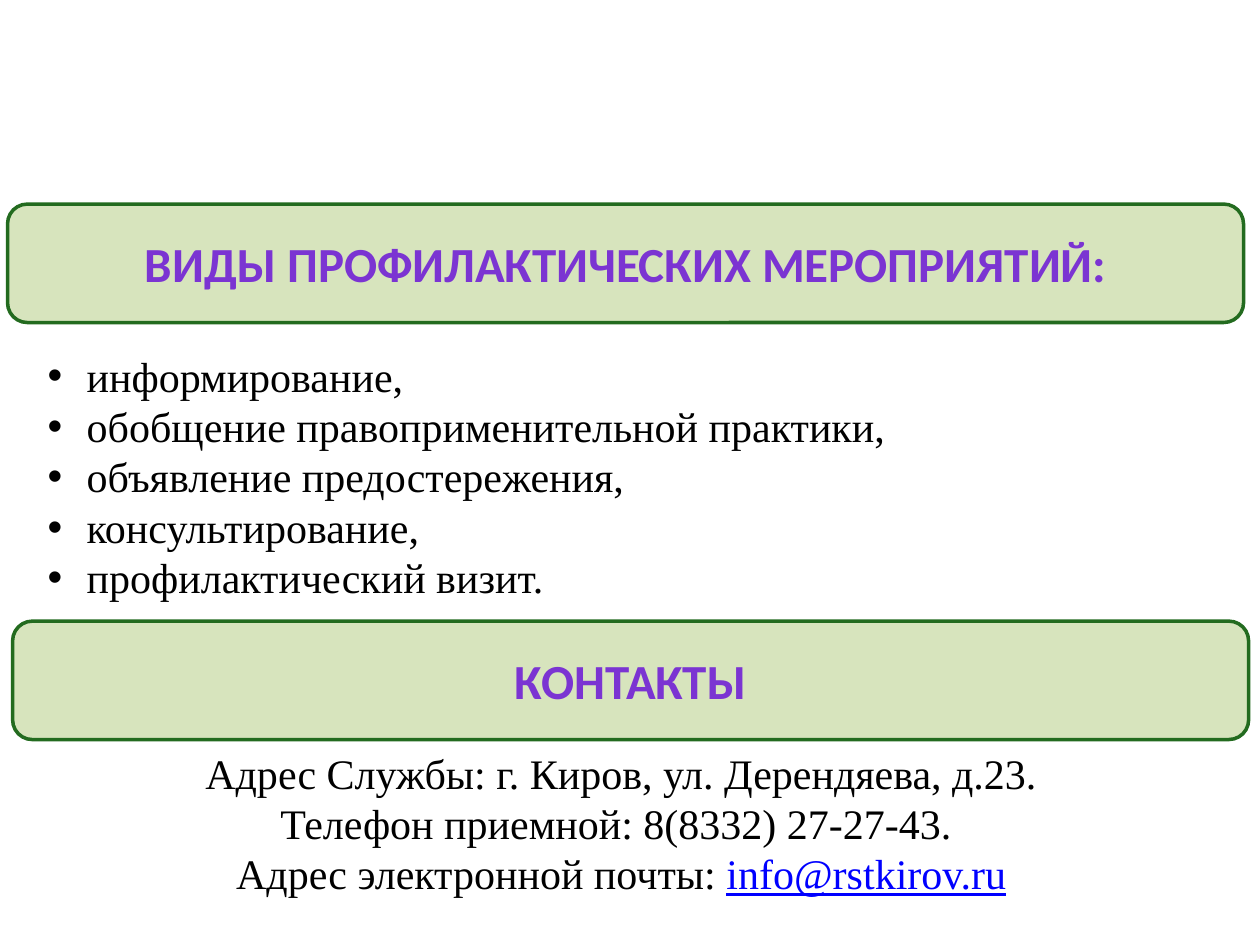
from lxml import etree
from pptx import Presentation
from pptx.dml.color import RGBColor
from pptx.enum.shapes import MSO_SHAPE
from pptx.enum.text import MSO_ANCHOR, PP_ALIGN
from pptx.oxml.ns import qn
from pptx.util import Inches, Pt

ROUNDED = MSO_SHAPE.ROUNDED_RECTANGLE
MIDDLE = MSO_ANCHOR.MIDDLE
CENTER, JUSTIFY = PP_ALIGN.CENTER, PP_ALIGN.JUSTIFY

BANNER_WIDTH, BANNER_HEIGHT = 9.81, 0.94
BULLET_INDENT = Inches(0.31)

MEASURES = [
    "информирование,",
    "обобщение правоприменительной практики,",
    "объявление предостережения,",
    "консультирование,",
    "профилактический визит.",
]
# Each contact line: plain text, underlined address
CONTACTS = [
    ("Адрес Службы: г. Киров, ул. Дерендяева, д.23.", ""),
    ("Телефон приемной: 8(8332) 27-27-43. ", ""),
    ("Адрес электронной почты: ", "info@rstkirov.ru"),
]


def color(hex_value):
    return RGBColor.from_string(hex_value)


def style(font, name, size, hex_value, bold=False):
    font.name, font.size, font.bold = name, Pt(size), bold
    font.color.rgb = color(hex_value)


def add_bullet(paragraph):
    properties = paragraph._p.get_or_add_pPr()
    properties.set("marL", str(BULLET_INDENT))
    properties.set("indent", str(-BULLET_INDENT))
    etree.SubElement(properties, qn("a:buFont")).set("typeface", "Arial")
    etree.SubElement(properties, qn("a:buChar")).set("char", "•")


def add_banner(slide, left, top, heading):
    banner = slide.shapes.add_shape(ROUNDED, Inches(left), Inches(top),
                                    Inches(BANNER_WIDTH), Inches(BANNER_HEIGHT))
    banner.shadow.inherit = False
    banner.fill.solid()
    banner.fill.fore_color.rgb = color("D7E4BD")
    banner.line.color.rgb = color("236B1F")
    banner.line.width = Pt(2)
    banner.text_frame.vertical_anchor = MIDDLE
    paragraph = banner.text_frame.paragraphs[0]
    paragraph.text = heading
    paragraph.alignment = CENTER
    style(paragraph.font, "Calibri", 28, "7B34D2", bold=True)


def add_lines(slide, box, count, alignment, bulleted=False):
    """Add a wrapped text box and return its empty, formatted paragraphs."""
    frame = slide.shapes.add_textbox(*map(Inches, box)).text_frame
    frame.word_wrap = True
    for _ in range(count - 1):
        frame.add_paragraph()
    for paragraph in frame.paragraphs:
        paragraph.alignment = alignment
        if bulleted:
            add_bullet(paragraph)
        style(paragraph.font, "Times New Roman", 24, "000000")
    return frame.paragraphs


def add_measures(slide, box):
    paragraphs = add_lines(slide, box, len(MEASURES), JUSTIFY, bulleted=True)
    for paragraph, measure in zip(paragraphs, MEASURES):
        paragraph.text = measure


def add_contacts(slide, box):
    paragraphs = add_lines(slide, box, len(CONTACTS), CENTER)
    for paragraph, (text, address) in zip(paragraphs, CONTACTS):
        paragraph.add_run().text = text
        if address:
            email = paragraph.add_run()
            email.text = address
            email.font.underline = True
            email.font.color.rgb = color("0000FF")


def main():
    deck = Presentation()
    deck.slide_width, deck.slide_height = Inches(10), Inches(7.5)
    slide = deck.slides.add_slide(deck.slide_layouts[6])

    # Preventive measures
    add_banner(slide, 0.06, 1.62, "ВИДЫ ПРОФИЛАКТИЧЕСКИХ МЕРОПРИЯТИЙ:")
    add_measures(slide, (0.28, 2.73, 9.21, 2.12))

    # Contacts
    add_banner(slide, 0.1, 4.93, "КОНТАКТЫ")
    add_contacts(slide, (0.4, 5.88, 9.06, 1.31))

    deck.save("out.pptx")


if __name__ == "__main__":
    main()
